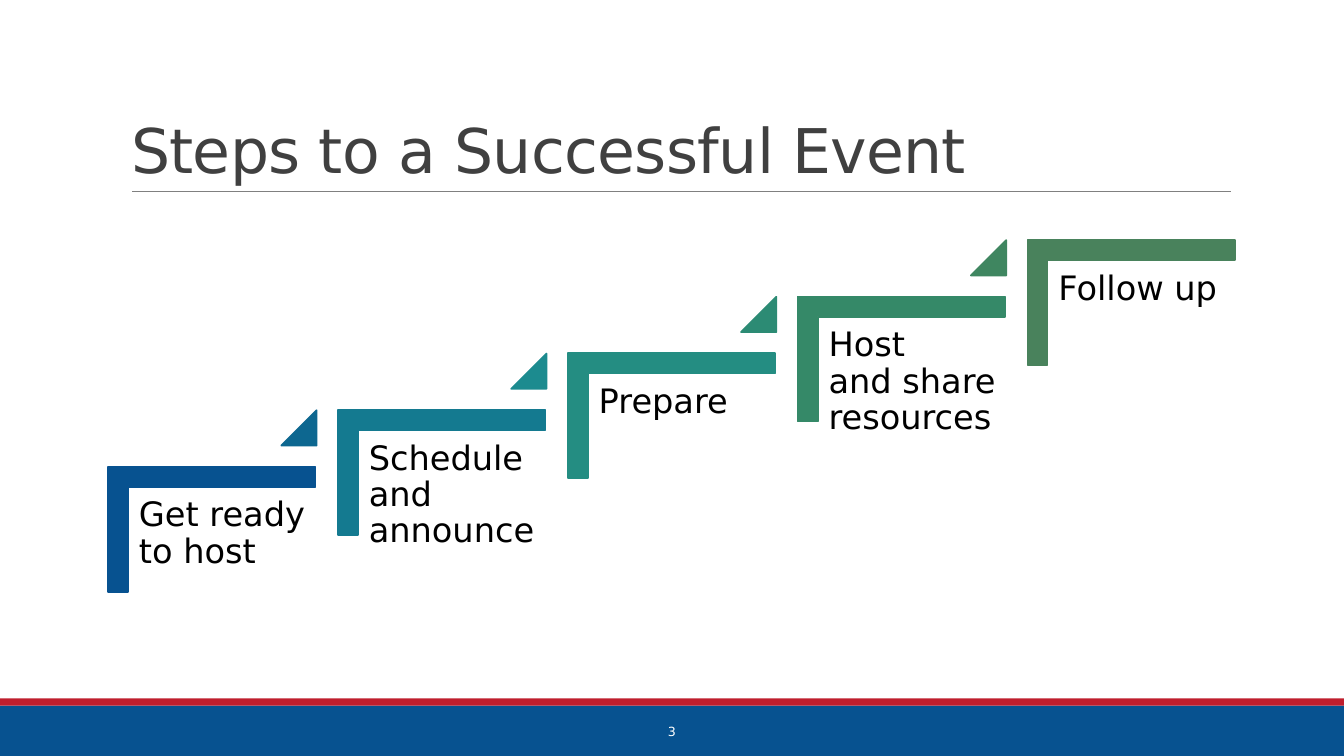
from lxml import etree
from pptx import Presentation
from pptx.dml.color import RGBColor
from pptx.enum.shapes import MSO_CONNECTOR, MSO_SHAPE
from pptx.enum.text import MSO_ANCHOR, MSO_AUTO_SIZE, PP_ALIGN
from pptx.oxml.ns import qn
from pptx.util import Inches, Pt

STRAIGHT = MSO_CONNECTOR.STRAIGHT
RECTANGLE, CORNER, TRIANGLE = (
    MSO_SHAPE.RECTANGLE, MSO_SHAPE.CORNER, MSO_SHAPE.ISOSCELES_TRIANGLE)
TOP, MIDDLE, BOTTOM = MSO_ANCHOR.TOP, MSO_ANCHOR.MIDDLE, MSO_ANCHOR.BOTTOM
LEFT, CENTER = PP_ALIGN.LEFT, PP_ALIGN.CENTER
NO_AUTOFIT = MSO_AUTO_SIZE.NONE

FONT = "DejaVu Sans"
TITLE_GREY = RGBColor(0x40, 0x40, 0x40)
RULE_GREY = RGBColor(0x80, 0x80, 0x80)
BLACK = RGBColor(0x00, 0x00, 0x00)
WHITE = RGBColor(0xFF, 0xFF, 0xFF)
BLUE = RGBColor(0x07, 0x52, 0x90)
RED = RGBColor(0xBF, 0x1E, 0x2D)

# Label, bracket colour, colour of the triangle leading to the next step
STEPS = [
    ("Get ready to host", BLUE, RGBColor(0x0D, 0x67, 0x90)),
    ("Schedule and announce", RGBColor(0x14, 0x7A, 0x90), RGBColor(0x1C, 0x8B, 0x8F)),
    ("Prepare", RGBColor(0x24, 0x8D, 0x82), RGBColor(0x2C, 0x8B, 0x74)),
    ("Host \vand share resources", RGBColor(0x35, 0x89, 0x68), RGBColor(0x3F, 0x86, 0x60)),
    ("Follow up", RGBColor(0x49, 0x82, 0x5C), None),
]
FIRST_LEFT, FIRST_TOP, LAST_TOP = 1.48, 4.22, 1.97
STEP_RUN = 2.28
STEP_RISE = (FIRST_TOP - LAST_TOP) / (len(STEPS) - 1)


def inches(*lengths):
    return [Inches(length) for length in lengths]


def write(frame, text, *, size, color, align=LEFT, anchor=TOP,
          line_spacing=None, inset=None, tracking=None):
    frame.word_wrap = True
    frame.auto_size = NO_AUTOFIT
    frame.vertical_anchor = anchor
    if inset is not None:
        frame.margin_left = frame.margin_right = Inches(inset)
        frame.margin_top = frame.margin_bottom = Inches(inset)
    paragraph = frame.paragraphs[0]
    paragraph.text = text
    paragraph.alignment = align
    if line_spacing:
        paragraph.line_spacing = line_spacing
    for run in paragraph.runs:
        run.font.name = FONT
        run.font.size = Pt(size)
        run.font.color.rgb = color
        if tracking:
            run._r.get_or_add_rPr().set("spc", str(round(tracking * 100)))


def add_block(shapes, kind, box, color, outline=None):
    block = shapes.add_shape(kind, *inches(*box))
    block.shadow.inherit = False
    block.fill.solid()
    block.fill.fore_color.rgb = color
    if outline:
        block.line.color.rgb = color
        block.line.width = Pt(outline)
    else:
        block.line.fill.background()
    return block


def add_rule(shapes, start, end, color, width):
    rule = shapes.add_connector(STRAIGHT, *inches(*start, *end))
    rule.line.color.rgb = color
    rule.line.width = Pt(width)
    etree.SubElement(rule._element.spPr, qn("a:effectLst"))


def add_step(shapes, left, top, label, bracket_color, triangle_color):
    bracket = add_block(shapes, CORNER, (left, top, 1.24, 2.06), bracket_color, 1.25)
    bracket.rotation = 90
    bracket.adjustments[0] = bracket.adjustments[1] = 0.161

    caption = shapes.add_textbox(*inches(left - 0.2, top + 0.62, 1.86, 1.63))
    write(caption.text_frame, label, size=24, color=BLACK,
          line_spacing=0.9, inset=0.1)

    if triangle_color:
        triangle = add_block(shapes, TRIANGLE, (left + 1.31, top - 0.15, 0.35, 0.35),
                             triangle_color, 1.25)
        triangle.adjustments[0] = 1


def main():
    deck = Presentation()
    deck.slide_width, deck.slide_height = inches(13.33, 7.5)
    slide = deck.slides.add_slide(deck.slide_layouts[5])
    shapes = slide.shapes

    # Footer bands and title rule
    add_block(shapes, RECTANGLE, (0, 7, 13.33, 0.5), BLUE)
    add_block(shapes, RECTANGLE, (0, 6.93, 13.33, 0.07), RED)
    add_rule(shapes, (1.31, 1.9), (12.21, 1.9), RULE_GREY, 0.5)

    # Title
    title = shapes.title
    title.left, title.top, title.width, title.height = inches(1.2, 0.31, 11, 1.59)
    write(title.text_frame, "Steps to a Successful Event", size=44,
          color=TITLE_GREY, anchor=BOTTOM, line_spacing=0.85, tracking=-0.5)

    # Rising staircase of steps
    staircase = shapes.add_group_shape()
    for index, step in enumerate(STEPS):
        add_step(staircase.shapes, FIRST_LEFT + index * STEP_RUN,
                 FIRST_TOP - index * STEP_RISE, *step)

    # Page number
    page_number = shapes.add_textbox(*inches(4.03, 7.06, 5.27, 0.4))
    write(page_number.text_frame, "3", size=9, color=WHITE,
          align=CENTER, anchor=MIDDLE)

    deck.save("out.pptx")


if __name__ == "__main__":
    main()
